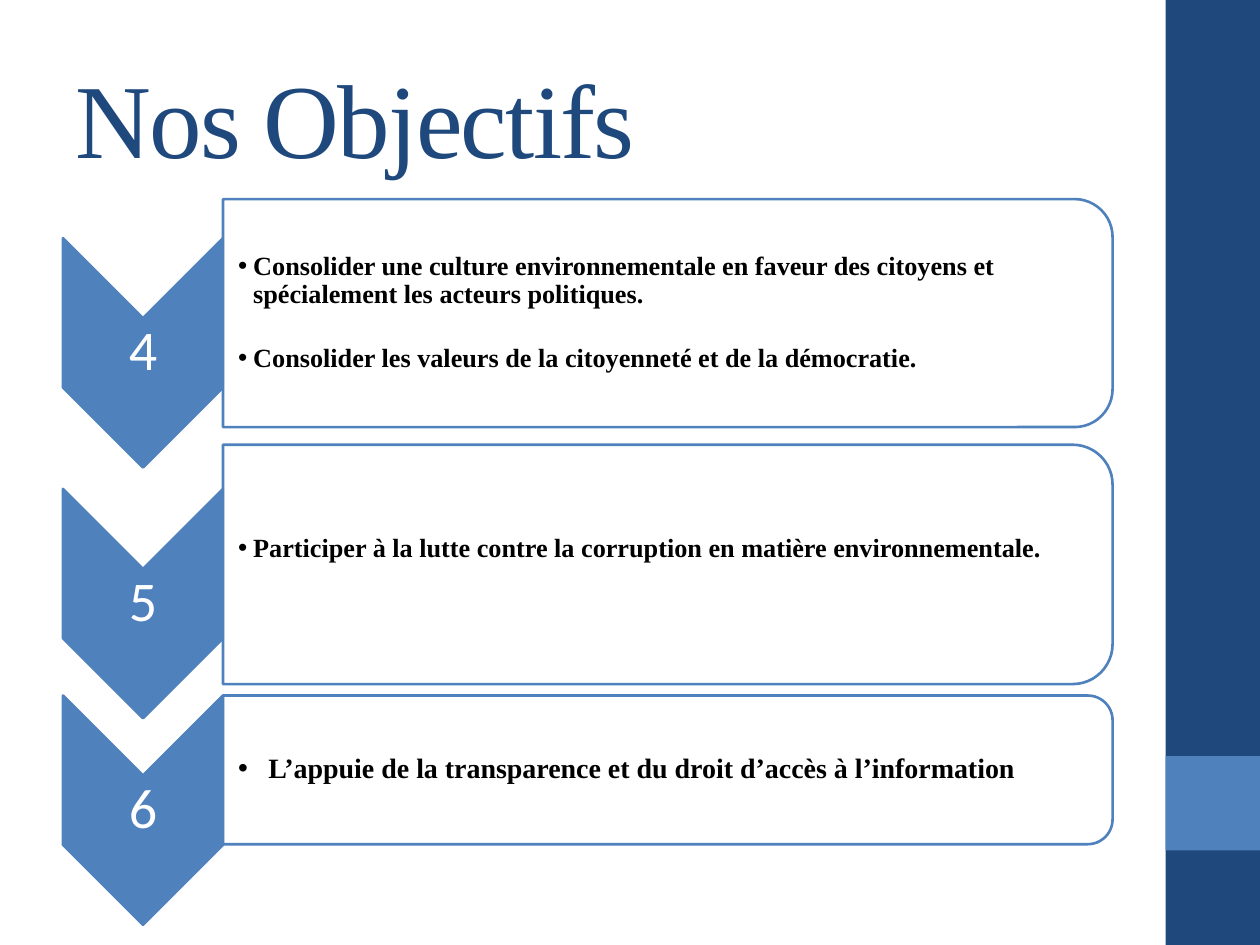
from lxml.etree import SubElement
from pptx import Presentation
from pptx.dml.color import RGBColor
from pptx.enum.shapes import MSO_SHAPE
from pptx.enum.text import MSO_ANCHOR, PP_ALIGN
from pptx.oxml.ns import qn
from pptx.util import Inches, Pt

NAVY = RGBColor(0x1F, 0x49, 0x7D)
BLUE = RGBColor(0x4F, 0x81, 0xBD)
WHITE = RGBColor(0xFF, 0xFF, 0xFF)
BLACK = RGBColor(0, 0, 0)

CHEVRON_LEFT, CHEVRON_WIDTH, CHEVRON_HEIGHT = 0.5, 1.27, 1.82
PANEL_LEFT, PANEL_WIDTH = 1.77, 7.06

OBJECTIVES = [
    {"number": "4", "chevron_top": 1.89, "panel_top": 1.58, "panel_height": 1.81,
     "size": 15, "indent": 0.12, "bottom": 0.01,
     "goals": ["Consolider une culture environnementale en faveur des citoyens et "
               "spécialement les acteurs politiques.",
               "Consolider les valeurs de la citoyenneté et de la démocratie."]},
    {"number": "5", "chevron_top": 3.88, "panel_top": 3.53, "panel_height": 1.9,
     "size": 15, "indent": 0.12, "bottom": 0.25,
     "goals": ["Participer à la lutte contre la corruption en matière environnementale."]},
    {"number": "6", "chevron_top": 5.52, "panel_top": 5.52, "panel_height": 1.18,
     "size": 16, "indent": 0.24, "bottom": 0.01,
     "goals": ["L’appuie de la transparence et du droit d’accès à l’information"]},
]


def apply_format(target, values):
    for name, value in values.items():
        setattr(target, name, value)


def add_block(slide, kind, left, top, width, height, fill, outlined=False):
    block = slide.shapes.add_shape(
        kind, Inches(left), Inches(top), Inches(width), Inches(height))
    block.shadow.inherit = False
    block.fill.solid()
    block.fill.fore_color.rgb = fill
    if outlined:
        block.line.color.rgb = BLUE
        block.line.width = Pt(1.5)
    else:
        block.line.fill.background()
    return block


def add_turned_block(slide, kind, left, top, width, height, fill):
    shift = (width - height) / 2
    block = add_block(slide, kind, left + shift, top - shift, height, width, fill, True)
    block.rotation = 90
    return block


def make_translucent(block, percent):
    color = block.fill._xPr.find(qn("a:solidFill"))[0]
    SubElement(color, qn("a:alpha"), val=str(percent * 1000))


def add_text(slide, left, top, width, height, lines, font, paragraph=None, insets=None):
    box = slide.shapes.add_textbox(
        Inches(left), Inches(top), Inches(width), Inches(height))
    frame = box.text_frame
    apply_format(frame, {"word_wrap": True, "vertical_anchor": MSO_ANCHOR.MIDDLE})
    apply_format(frame, insets or {})
    frame.text = "\n".join(lines)
    color = font.pop("color")
    for line in frame.paragraphs:
        apply_format(line, paragraph or {})
        for run in line.runs:
            apply_format(run.font, font)
            run.font.color.rgb = color
    return frame


def add_bullets(frame, indent):
    for line in frame.paragraphs:
        properties = line._p.get_or_add_pPr()
        properties.set("marL", str(Inches(indent)))
        properties.set("indent", str(-Inches(indent)))
        SubElement(properties, qn("a:buFont"), typeface="Arial")
        SubElement(properties, qn("a:buChar"), char="•")
    for line in frame.paragraphs[1:]:
        line.space_before = Pt(20.5)


def add_title(slide):
    frame = add_text(slide, 0.5, 0.3, 8.33, 1.25, ["Nos Objectifs"],
                     {"name": "Times New Roman", "size": Pt(60), "color": NAVY})
    frame.paragraphs[0].runs[0]._r.get_or_add_rPr().set("spc", "-100")


def add_number(slide, number, top):
    add_turned_block(slide, MSO_SHAPE.CHEVRON, CHEVRON_LEFT, top,
                     CHEVRON_WIDTH, CHEVRON_HEIGHT, BLUE)
    sides = ("left", "right", "top", "bottom")
    add_text(slide, CHEVRON_LEFT, top + 0.64, CHEVRON_WIDTH, 0.54, [number],
             {"name": "Calibri", "size": Pt(32), "color": WHITE},
             {"alignment": PP_ALIGN.CENTER, "line_spacing": 0.9},
             {f"margin_{side}": Inches(0.02) for side in sides})


def add_panel(slide, objective):
    top, height = objective["panel_top"], objective["panel_height"]
    panel = add_turned_block(slide, MSO_SHAPE.ROUND_2_SAME_RECTANGLE,
                             PANEL_LEFT, top, PANEL_WIDTH, height, WHITE)
    make_translucent(panel, 90)
    goals = add_text(slide, PANEL_LEFT, top + 0.09, 6.97, height - 0.18, objective["goals"],
                     {"name": "Times New Roman", "size": Pt(objective["size"]),
                      "bold": True, "color": BLACK},
                     {"line_spacing": 0.9},
                     {"margin_left": Inches(0.12), "margin_right": Inches(0.01),
                      "margin_top": Inches(0.01),
                      "margin_bottom": Inches(objective["bottom"])})
    add_bullets(goals, objective["indent"])


def main():
    presentation = Presentation()
    presentation.slide_width = Inches(10)
    presentation.slide_height = Inches(7.5)
    slide = presentation.slides.add_slide(presentation.slide_layouts[6])
    add_block(slide, MSO_SHAPE.RECTANGLE, 9.25, 0, 0.75, 7.5, NAVY)
    add_block(slide, MSO_SHAPE.RECTANGLE, 9.25, 6, 0.75, 0.75, BLUE)
    add_title(slide)
    for objective in OBJECTIVES:
        add_number(slide, objective["number"], objective["chevron_top"])
        add_panel(slide, objective)
    presentation.save("out.pptx")


if __name__ == "__main__":
    main()
